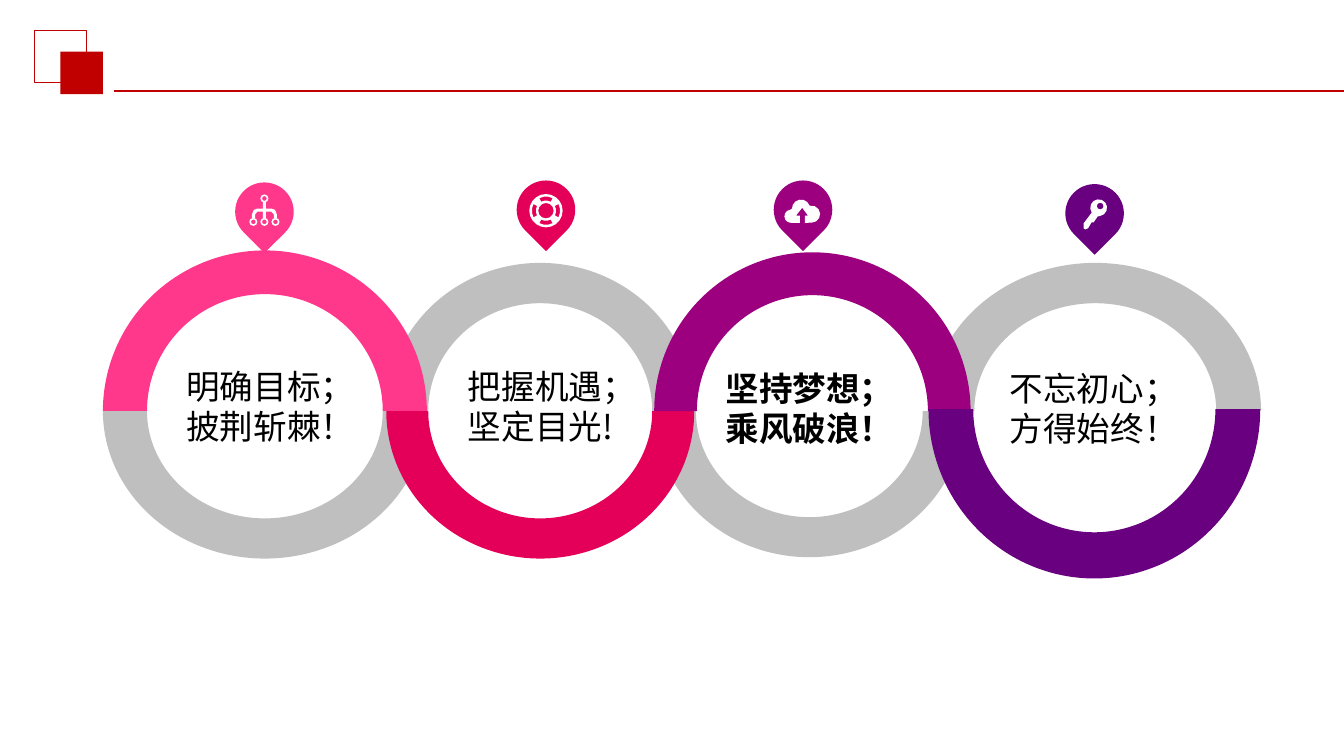
from math import cos, radians, sin

from lxml.etree import Element, SubElement
from pptx import Presentation
from pptx.dml.color import RGBColor
from pptx.enum.shapes import MSO_CONNECTOR, MSO_SHAPE
from pptx.enum.text import MSO_AUTO_SIZE
from pptx.oxml.ns import qn
from pptx.util import Pt

COLORS = {
    "red": "C00000", "pink": "FF388C", "crimson": "E40059", "purple": "9C007F",
    "violet": "68007F", "grey": "BFBFBF", "white": "FFFFFF", "black": "000000",
}


def arc(cx, cy, r, start, end, steps):
    """Points along a circle, angles in degrees, clockwise from the right."""
    angles = [radians(start + (end - start) * i / steps) for i in range(steps + 1)]
    return [(cx + r * cos(a), cy + r * sin(a)) for a in angles]


def circle(cx, cy, r, steps=8):
    return arc(cx, cy, r, 0, 360, steps)[:-1]


class SlidePainter:
    PIN_SIZE = 41.8

    def __init__(self, slide):
        self.shapes = slide.shapes
        self.text_format = {"size": Pt(24), "bold": False, "name": "Calibri"}
        self.frame_format = {"word_wrap": True, "auto_size": MSO_AUTO_SIZE.SHAPE_TO_FIT_TEXT}

    def color(self, name):
        return RGBColor.from_string(COLORS[name])

    def paint(self, shape, fill=None, line=None, width=0.75):
        shape.shadow.inherit = False
        if fill:
            shape.fill.solid()
            shape.fill.fore_color.rgb = self.color(fill)
        else:
            shape.fill.background()
        if line:
            shape.line.color.rgb = self.color(line)
            shape.line.width = Pt(width)
        else:
            shape.line.fill.background()

    def preset(self, kind, left, top, size, rotation=0, **style):
        shape = self.shapes.add_shape(kind, Pt(left), Pt(top), Pt(size), Pt(size))
        shape.rotation = rotation
        self.paint(shape, **style)

    def rule(self, x1, x2, y, color, width):
        rule = self.shapes.add_connector(MSO_CONNECTOR.STRAIGHT, Pt(x1), Pt(y), Pt(x2), Pt(y))
        rule.line.color.rgb = self.color(color)
        rule.line.width = Pt(width)
        SubElement(rule._element.spPr, qn("a:effectLst"))

    def outline(self, contours, fill, cx=0, cy=0):
        placed = [[(Pt(cx + x), Pt(cy + y)) for x, y in contour] for contour in contours]
        builder = self.shapes.build_freeform(*placed[0][0])
        for index, (first, *others) in enumerate(placed):
            if index:
                builder.move_to(*first)
            builder.add_line_segments(others, close=True)
        shape = builder.convert_to_shape()
        self.paint(shape, fill)
        return shape

    def half_ring(self, fill, side, cx, base, outer, inner):
        """Half of a ring; side is -1 for the upper half and 1 for the lower."""
        (rx, ry), (hole_rx, hole_ry) = outer, inner
        ring = self.outline([[
            (cx + rx, base), (cx, base + side * ry), (cx - rx, base),
            (cx - hole_rx, base), (cx, base + side * hole_ry), (cx + hole_rx, base),
        ]], fill)
        # Each pair of segments through a crest becomes one true arc
        segments = list(ring._element.iter(qn("a:lnTo")))
        for crest, radii, start, sweep in [(0, outer, 0, side), (3, inner, 180, -side)]:
            curve = Element(qn("a:arcTo"), wR=str(Pt(radii[0])), hR=str(Pt(radii[1])),
                            stAng=str(start * 60000), swAng=str(sweep * 180 * 60000))
            contour = segments[crest].getparent()
            contour.replace(segments[crest], curve)
            contour.remove(segments[crest + 1])

    def pin(self, fill, cx, cy, icon):
        half = self.PIN_SIZE / 2
        self.preset(MSO_SHAPE.TEAR, cx - half, cy - half, self.PIN_SIZE, 135, fill=fill)
        self.outline(icon, "white", cx, cy)

    def motto(self, text, left, top, width, height, **changes):
        frame = self.shapes.add_textbox(Pt(left), Pt(top), Pt(width), Pt(height)).text_frame
        for key, value in self.frame_format.items():
            setattr(frame, key, value)
        run = frame.paragraphs[0].add_run()
        run.text = text
        for key, value in {**self.text_format, **changes}.items():
            setattr(run.font, key, value)
        run.font.color.rgb = self.color("black")


# Icons, measured from the pin centre
def hierarchy_icon():
    left = [(-1, -6.6), (-1, -2.2), (-5, -2.2), (-7.6, -1.2), (-8.9, 2), (-8.9, 4.5),
            (-6.7, 4.5), (-6.7, 2), (-5, 0), (-1, 0), (-1, 4.5)]
    right = [(-x, y) for x, y in reversed(left)]
    nodes = [(0, -9.4), (-7.9, 7.3), (0, 7.3), (7.9, 7.3)]
    return [left + right] + [circle(x, y, r) for x, y in nodes for r in (2.9, 1.7)]


def lifebuoy_icon():
    slots = [arc(0, 0.7, 10.1, mid - 28, mid + 28, 3) + arc(0, 0.7, 7.2, mid + 28, mid - 28, 3)
             for mid in range(0, 360, 90)]
    return [circle(0, 0.7, 11.9, 20), circle(0, 0.7, 5.5, 12)] + slots


def cloud_icon():
    lobes = (arc(-8.6, 4.7, 4.7, 90, 265, 6) + arc(-1.4, -0.7, 6.5, 180, 340, 6)
             + arc(6.1, 3.2, 6.1, 260, 450, 6))
    arrow = [(1.4, 9.4), (1.4, 4.3), (3.6, 4.3), (-0.6, -1.4), (-5, 4.3), (-2.2, 4.3), (-2.2, 9.4)]
    return [lobes + arrow]


def key_icon():
    shaft = [(-7.9, 7.2), (-7.9, 10.8), (-6.5, 11.5), (-5, 10.8), (-4.3, 10.1),
             (-2.2, 6.5), (-0.7, 6.5), (2.2, 2.2)]
    return [arc(2.9, -4, 6, 80, -215, 10) + shaft, circle(4, -5.2, 2.4)]


def main():
    presentation = Presentation()
    presentation.slide_width, presentation.slide_height = Pt(960), Pt(540)
    painter = SlidePainter(presentation.slides.add_slide(presentation.slide_layouts[6]))

    # Header squares and rule
    painter.preset(MSO_SHAPE.RECTANGLE, 24.5, 21.6, 37.6, line="red")
    painter.preset(MSO_SHAPE.RECTANGLE, 43.2, 36.9, 30.4, fill="red")
    painter.rule(81.4, 960, 65, "red", 1.25)

    # Pins
    painter.pin("pink", 188.9, 151.2, hierarchy_icon())
    painter.pin("purple", 573.6, 149.8, cloud_icon())
    painter.pin("crimson", 390, 149.8, lifebuoy_icon())
    painter.pin("violet", 781.9, 152.4, key_icon())

    # Linked rings, back to front
    upper, lower = -1, 1
    for half in [
        ("grey", upper, 782.4, 293.6, (118.4, 105.8), (86.4, 77)),
        ("grey", lower, 578.1, 293.6, (110.9, 104.4), (81, 75.8)),
        ("grey", upper, 385.9, 293.6, (110, 105.8), (80, 77)),
        ("pink", upper, 189.2, 293.6, (115.7, 114.7), (84.2, 83.5)),
        ("grey", lower, 189.2, 293.6, (115.7, 105.4), (84.2, 76.7)),
        ("crimson", lower, 385.9, 293.6, (110, 105.4), (80, 76.7)),
        ("purple", upper, 580.3, 293.6, (113, 113.4), (82.5, 82.8)),
        ("violet", lower, 781.7, 292.2, (118.5, 121), (86.5, 88)),
    ]:
        painter.half_ring(*half)

    # Mottos
    painter.motto("明确目标；披荆斩棘！", 126, 257.8, 127.4, 65.5)
    painter.motto("把握机遇；坚定目光!", 327.2, 257.8, 117.4, 87.1, name="Noto Sans CJK JP")
    painter.motto("坚持梦想；乘风破浪！", 511.2, 259.2, 134.6, 65.5, bold=True)
    painter.motto("不忘初心；方得始终！", 714.2, 259.2, 120.2, 65.5, name="Noto Sans CJK JP")

    presentation.save("out.pptx")


if __name__ == "__main__":
    main()
